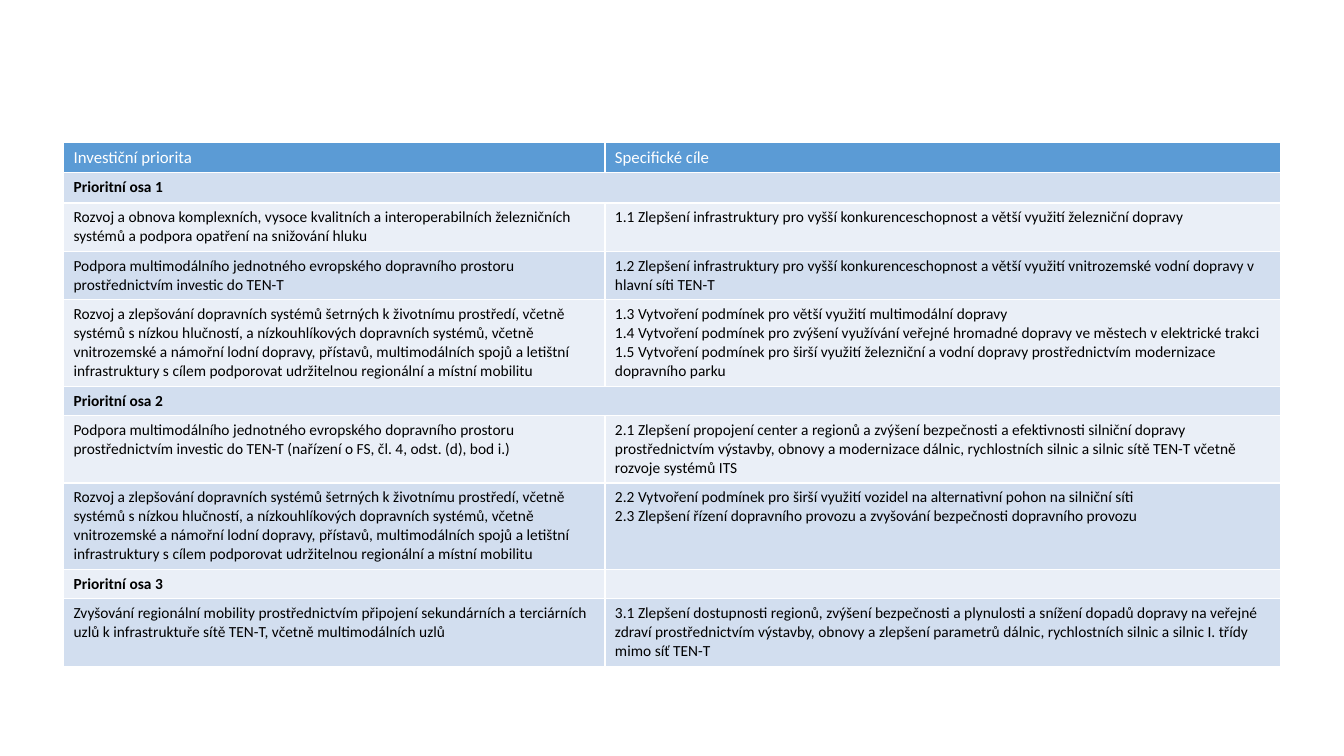
import pptx
import pptx.dml.color
import pptx.util

Inches = pptx.util.Inches

ECO = (
    "Rozvoj a zlepšování dopravních systémů šetrných k životnímu prostředí, včetně "
    "systémů s nízkou hlučností, a nízkouhlíkových dopravních systémů, včetně "
    "vnitrozemské a námořní lodní dopravy, přístavů, multimodálních spojů a letištní "
    "infrastruktury s cílem podporovat udržitelnou regionální a místní mobilitu"
)
MULTI = (
    "Podpora multimodálního jednotného evropského dopravního prostoru "
    "prostřednictvím investic do TEN-T"
)
ROWS = [
    (0.3, "Investiční priorita", "Specifické cíle"),
    (0.3, "Prioritní osa 1", None),
    (0.48,
     "Rozvoj a obnova komplexních, vysoce kvalitních a interoperabilních "
     "železničních systémů a podpora opatření na snižování hluku",
     "1.1 Zlepšení infrastruktury pro vyšší konkurenceschopnost a větší využití "
     "železniční dopravy"),
    (0.48, MULTI,
     "1.2 Zlepšení infrastruktury pro vyšší konkurenceschopnost a větší využití "
     "vnitrozemské vodní dopravy v hlavní síti TEN-T"),
    (0.86, ECO,
     "1.3 Vytvoření podmínek pro větší využití multimodální dopravy\n"
     "1.4 Vytvoření podmínek pro zvýšení využívání veřejné hromadné dopravy ve "
     "městech v elektrické trakci\n"
     "1.5 Vytvoření podmínek pro širší využití železniční a vodní dopravy "
     "prostřednictvím modernizace dopravního parku"),
    (0.28, "Prioritní osa 2", None),
    (0.67, MULTI + " (nařízení o FS, čl. 4, odst. (d), bod i.)",
     "2.1 Zlepšení propojení center a regionů a zvýšení bezpečnosti a efektivnosti "
     "silniční dopravy prostřednictvím výstavby, obnovy a modernizace dálnic, "
     "rychlostních silnic a silnic sítě TEN-T včetně rozvoje systémů ITS"),
    (0.86, ECO,
     "2.2 Vytvoření podmínek pro širší využití vozidel na alternativní pohon na "
     "silniční síti\n"
     "2.3 Zlepšení řízení dopravního provozu a zvyšování bezpečnosti dopravního "
     "provozu"),
    (0.28, "Prioritní osa 3", ""),
    (0.67,
     "Zvyšování regionální mobility prostřednictvím připojení sekundárních a "
     "terciárních uzlů k infrastruktuře sítě TEN-T, včetně multimodálních uzlů",
     "3.1 Zlepšení dostupnosti regionů, zvýšení bezpečnosti a plynulosti a snížení "
     "dopadů dopravy na veřejné zdraví prostřednictvím výstavby, obnovy a zlepšení "
     "parametrů dálnic, rychlostních silnic a silnic I. třídy mimo síť TEN-T"),
]


def paint(part, color):
    """Give a fill or font colour format a hex colour."""
    part.rgb = pptx.dml.color.RGBColor.from_string(color)


def fill_cell(cell, text, fill, size, color, bold):
    """Write one table cell and colour it."""
    cell.fill.solid()
    paint(cell.fill.fore_color, fill)
    cell.text = text
    for para in cell.text_frame.paragraphs:
        para.font.name = "Calibri"
        para.font.size = pptx.util.Pt(size)
        para.font.bold = bold
        paint(para.font.color, color)


def add_goals(slide, left, top, width):
    """Place the table of priorities and their goals."""
    height = sum(row[0] for row in ROWS)
    table = slide.shapes.add_table(
        len(ROWS), 2, Inches(left), Inches(top), Inches(width), Inches(height)
    ).table
    first = 5.37
    for col, size in zip(table.columns, (first, width - first)):
        col.width = Inches(size)
    for num, (tall, *texts) in enumerate(ROWS):
        table.rows[num].height = Inches(tall)
        if num == 0:
            look = "5B9BD5", 12, "FFFFFF", False
        else:
            band = "D2DEEF" if num % 2 else "EAEFF7"
            look = band, 11, "000000", not texts[1]
        for col, text in enumerate(texts):
            fill_cell(table.cell(num, col), text or "", *look)
        if texts[1] is None:
            table.cell(num, 0).merge(table.cell(num, 1))


def main():
    """Build the slide and save it."""
    deck = pptx.Presentation()
    deck.slide_width, deck.slide_height = Inches(13.33), Inches(7.5)
    slide = deck.slides.add_slide(deck.slide_layouts[6])
    add_goals(slide, 0.63, 1.41, 12.07)
    deck.save("out.pptx")


if __name__ == "__main__":
    main()
